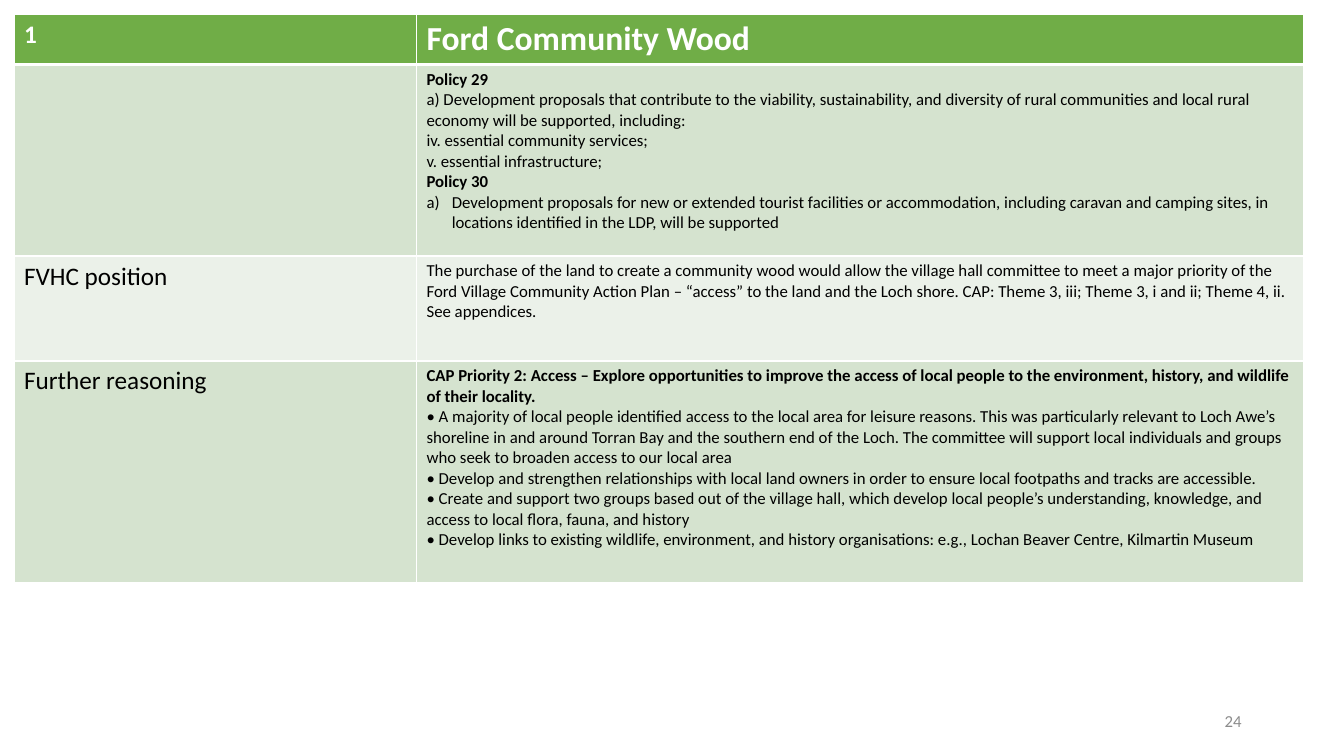
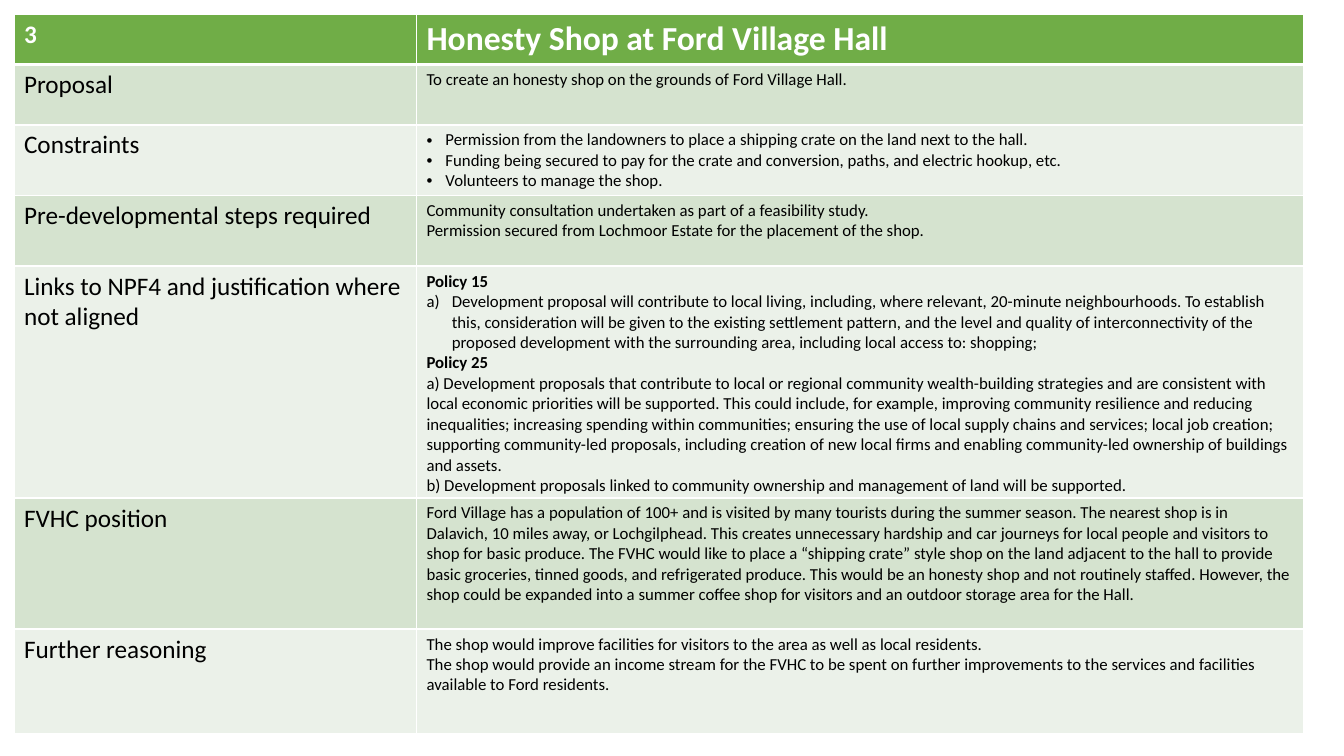
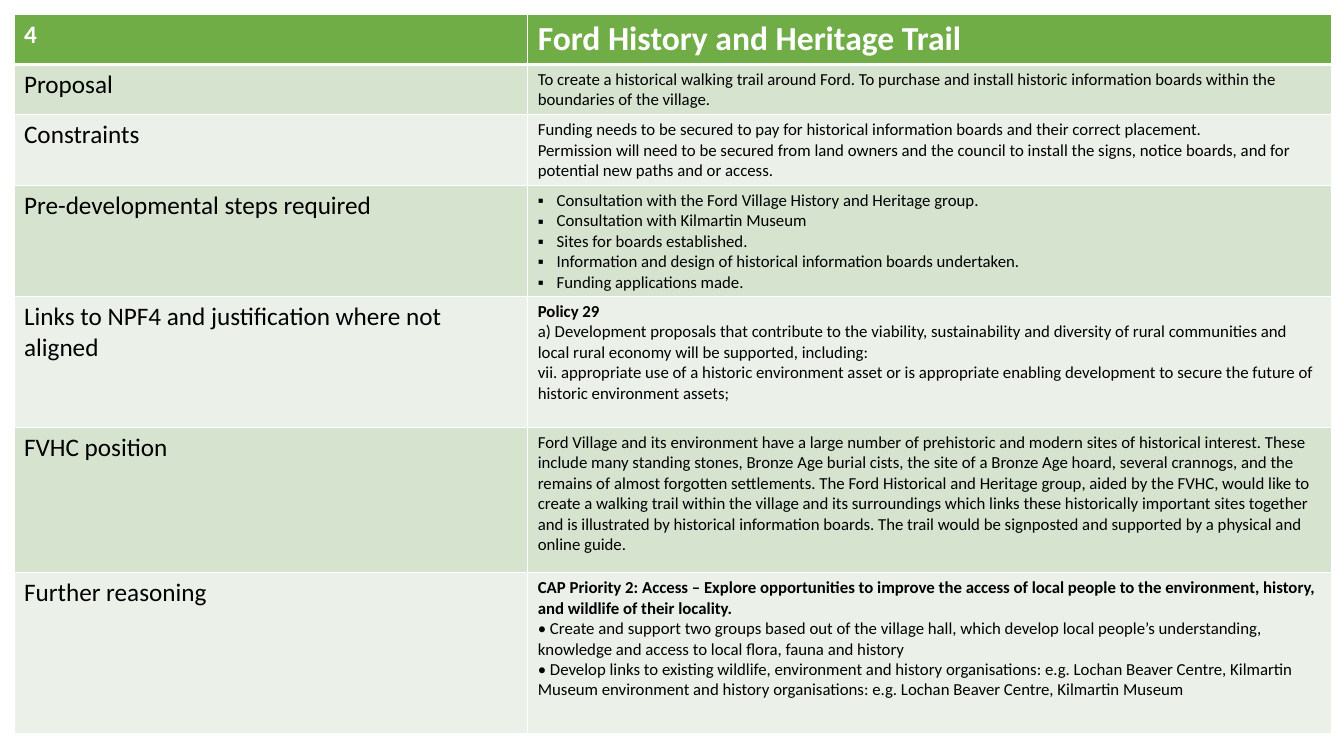
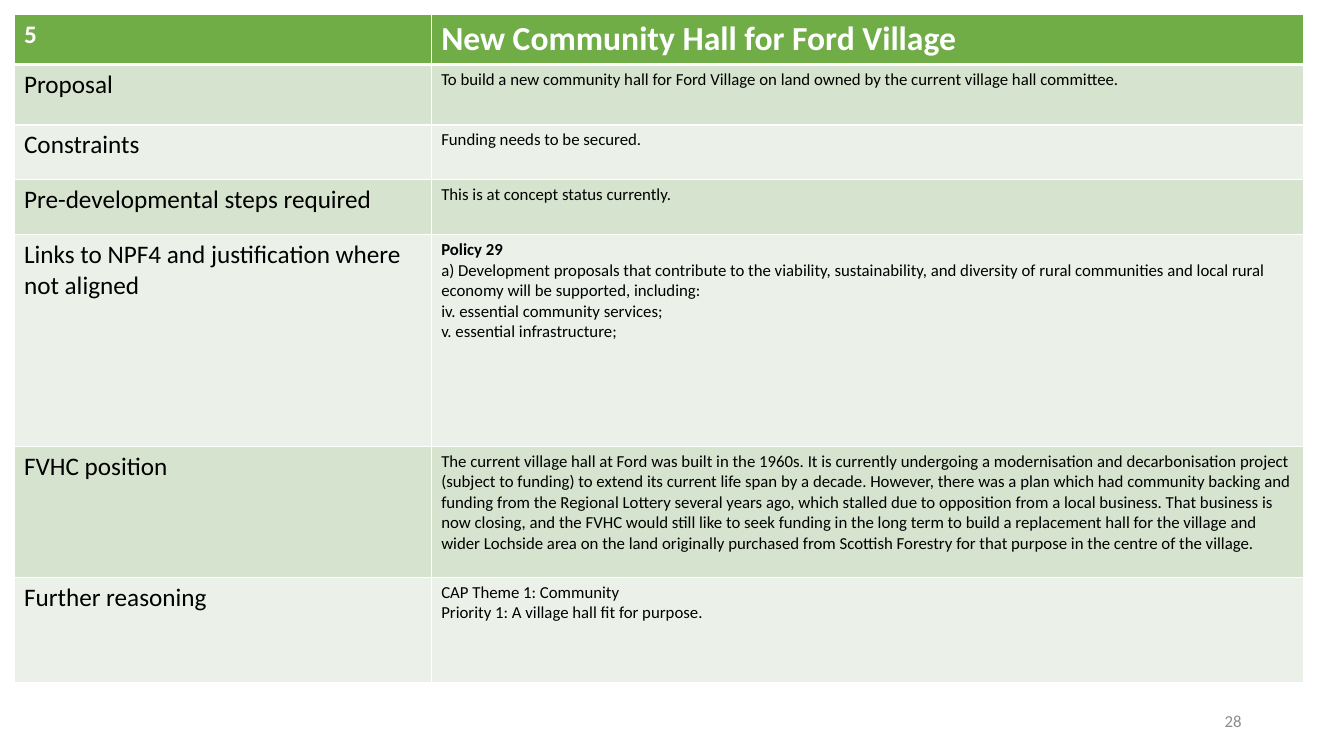
import dataclasses

import lxml.etree
import pptx
import pptx.dml.color
import pptx.enum.text
import pptx.oxml.ns
import pptx.util

Pt = pptx.util.Pt
RGB = pptx.dml.color.RGBColor
qn = pptx.oxml.ns.qn


@dataclasses.dataclass(frozen=True)
class Theme:
    font: str = "Calibri"
    heading_size: int = 24
    label_size: int = 18
    body_size: int = 12
    white: RGB = RGB(0xFF, 0xFF, 0xFF)
    black: RGB = RGB(0, 0, 0)
    page_grey: RGB = RGB(0x8C, 0x8C, 0x8C)
    header_green: RGB = RGB(0x70, 0xAD, 0x47)
    bands: tuple = (RGB(0xD5, 0xE3, 0xCF), RGB(0xEB, 0xF1, 0xE9))
    margin: int = 10
    rule: int = 1
    header_rule: int = 3
    header_height: int = 36


@dataclasses.dataclass(frozen=True)
class Para:
    text: str
    bold: bool = False
    marker: str = ""


def strong(text):
    return Para(text, bold=True)


def lettered(text):
    return Para(text, marker="a)")


def bulleted(marker, *texts):
    return [Para(text, marker=marker) for text in texts]


def plain(*texts):
    return [Para(text) for text in texts]


class Deck:
    def __init__(self, theme):
        self.theme = theme
        self.deck = pptx.Presentation()
        self.deck.slide_width = Pt(960)
        self.deck.slide_height = Pt(540)
        self.slide = None

    def new_slide(self):
        self.slide = self.deck.slides.add_slide(self.deck.slide_layouts[6])

    def add_run(self, paragraph, text, size, color, bold=False):
        run = paragraph.add_run()
        run.text = text
        run.font.name = self.theme.font
        run.font.size = Pt(size)
        run.font.bold = bold
        run.font.color.rgb = color

    def add_marker(self, paragraph, marker):
        indent = 18 if marker == "a)" else 13.5
        properties = paragraph._p.get_or_add_pPr()
        properties.set("marL", str(Pt(indent)))
        properties.set("indent", str(-Pt(indent)))
        if marker == "a)":
            lxml.etree.SubElement(properties, qn("a:buAutoNum"), type="alphaLcParenR")
        else:
            lxml.etree.SubElement(properties, qn("a:buFont"), typeface="Arial")
            lxml.etree.SubElement(properties, qn("a:buChar"), char=marker)

    def add_borders(self, cell, bottom):
        properties = cell._tc.get_or_add_tcPr()
        widths = {"lnL": self.theme.rule, "lnR": self.theme.rule,
                  "lnT": self.theme.rule, "lnB": bottom}
        for side, width in widths.items():
            line = lxml.etree.SubElement(properties, qn("a:" + side), w=str(Pt(width)))
            fill = lxml.etree.SubElement(line, qn("a:solidFill"))
            lxml.etree.SubElement(fill, qn("a:srgbClr"), val=str(self.theme.white))

    def fill_cell(self, cell, paras, size, color, fill, bottom):
        self.add_borders(cell, bottom)
        cell.fill.solid()
        cell.fill.fore_color.rgb = fill
        for index, para in enumerate(paras):
            frame = cell.text_frame
            paragraph = frame.add_paragraph() if index else frame.paragraphs[0]
            if para.marker:
                self.add_marker(paragraph, para.marker)
            self.add_run(paragraph, para.text, size, color, para.bold)

    def proposal_table(self, number, heading, widths, rows):
        theme = self.theme
        heights = [theme.header_height] + [height for _, height, _ in rows]
        table = self.slide.shapes.add_table(
            len(heights), 2, Pt(theme.margin), Pt(theme.margin),
            Pt(sum(widths)), Pt(sum(heights))).table
        for column, width in zip(table.columns, widths):
            column.width = Pt(width)
        for row, height in zip(table.rows, heights):
            row.height = Pt(height)
        for column, (text, size) in enumerate(
                [(number, theme.label_size), (heading, theme.heading_size)]):
            self.fill_cell(table.cell(0, column), [strong(text)], size,
                           theme.white, theme.header_green, theme.header_rule)
        for index, (label, _, body) in enumerate(rows):
            band = theme.bands[index % 2]
            label_paras = plain(label) if label else []
            for column, (paras, size) in enumerate(
                    [(label_paras, theme.label_size), (body, theme.body_size)]):
                self.fill_cell(table.cell(index + 1, column), paras, size,
                               theme.black, band, theme.rule)

    def page_number(self, number):
        frame = self.slide.shapes.add_textbox(Pt(678), Pt(500.5), Pt(216), Pt(28.75)).text_frame
        frame.word_wrap = True
        frame.vertical_anchor = pptx.enum.text.MSO_ANCHOR.MIDDLE
        paragraph = frame.paragraphs[0]
        paragraph.alignment = pptx.enum.text.PP_ALIGN.RIGHT
        self.add_run(paragraph, number, self.theme.body_size, self.theme.page_grey)


POSITION = "FVHC position"
REASONING = "Further reasoning"
LABELS = ["Proposal", "Constraints", "Pre-developmental steps required",
          "Links to NPF4 and justification where not aligned", POSITION, REASONING]

ACCESS_PRIORITY = strong(
    "CAP Priority 2: Access – Explore opportunities to improve the access of local people "
    "to the environment, history, and wildlife of their locality.")
RURAL_POLICY = [strong("Policy 29")] + plain(
    "a) Development proposals that contribute to the viability, sustainability, and diversity "
    "of rural communities and local rural economy will be supported, including:",
    "iv. essential community services;",
    "v. essential infrastructure;")

WOOD_ROWS = [
    ("", 136.8, RURAL_POLICY + [
        strong("Policy 30"),
        lettered("Development proposals for new or extended tourist facilities or accommodation, "
                 "including caravan and camping sites, in locations identified in the LDP, "
                 "will be supported")]),
    (POSITION, 75, plain(
        "The purchase of the land to create a community wood would allow the village hall "
        "committee to meet a major priority of the Ford Village Community Action Plan – “access” "
        "to the land and the Loch shore. CAP: Theme 3, iii; Theme 3, i and ii; Theme 4, ii. "
        "See appendices.")),
    (REASONING, 158.4, [ACCESS_PRIORITY] + plain(
        "• A majority of local people identified access to the local area for leisure reasons. "
        "This was particularly relevant to Loch Awe’s shoreline in and around Torran Bay and the "
        "southern end of the Loch. The committee will support local individuals and groups who "
        "seek to broaden access to our local area",
        "• Develop and strengthen relationships with local land owners in order to ensure local "
        "footpaths and tracks are accessible.",
        "• Create and support two groups based out of the village hall, which develop local "
        "people’s understanding, knowledge, and access to local flora, fauna, and history",
        "• Develop links to existing wildlife, environment, and history organisations: e.g., "
        "Lochan Beaver Centre, Kilmartin Museum")),
]

SHOP_HEIGHTS = [43.2, 50.4, 50.4, 165.6, 93.6, 75]
SHOP_BODIES = [
    plain("To create an honesty shop on the grounds of Ford Village Hall."),
    bulleted(
        "•",
        "Permission from the landowners to place a shipping crate on the land next to the hall.",
        "Funding being secured to pay for the crate and conversion, paths, and electric hookup, etc.",
        "Volunteers to manage the shop."),
    plain("Community consultation undertaken as part of a feasibility study.",
          "Permission secured from Lochmoor Estate for the placement of the shop."),
    [strong("Policy 15"),
     lettered("Development proposal will contribute to local living, including, where relevant, "
              "20-minute neighbourhoods. To establish this, consideration will be given to the "
              "existing settlement pattern, and the level and quality of interconnectivity of the "
              "proposed development with the surrounding area, including local access to: shopping;"),
     strong("Policy 25")] + plain(
        "a) Development proposals that contribute to local or regional community wealth-building "
        "strategies and are consistent with local economic priorities will be supported. This could "
        "include, for example, improving community resilience and reducing inequalities; increasing "
        "spending within communities; ensuring the use of local supply chains and services; local "
        "job creation; supporting community-led proposals, including creation of new local firms "
        "and enabling community-led ownership of buildings and assets.",
        "b) Development proposals linked to community ownership and management of land will be "
        "supported."),
    plain("Ford Village has a population of 100+ and is visited by many tourists during the summer "
          "season. The nearest shop is in Dalavich, 10 miles away, or Lochgilphead. This creates "
          "unnecessary hardship and car journeys for local people and visitors to shop for basic "
          "produce. The FVHC would like to place a “shipping crate” style shop on the land adjacent "
          "to the hall to provide basic groceries, tinned goods, and refrigerated produce. This "
          "would be an honesty shop and not routinely staffed. However, the shop could be expanded "
          "into a summer coffee shop for visitors and an outdoor storage area for the Hall."),
    plain("The shop would improve facilities for visitors to the area as well as local residents.",
          "The shop would provide an income stream for the FVHC to be spent on further improvements "
          "to the services and facilities available to Ford residents."),
]

TRAIL_HEIGHTS = [36, 50.4, 79.2, 93.6, 103.7, 115.2]
TRAIL_BODIES = [
    plain("To create a historical walking trail around Ford. To purchase and install historic "
          "information boards within the boundaries of the village."),
    plain("Funding needs to be secured to pay for historical information boards and their correct "
          "placement.",
          "Permission will need to be secured from land owners and the council to install the "
          "signs, notice boards, and for potential new paths and or access."),
    bulleted(
        "▪",
        "Consultation with the Ford Village History and Heritage group.",
        "Consultation with Kilmartin Museum",
        "Sites for boards established.",
        "Information and design of historical information boards undertaken.",
        "Funding applications made."),
    [strong("Policy 29")] + plain(
        "a) Development proposals that contribute to the viability, sustainability and diversity "
        "of rural communities and local rural economy will be supported, including:",
        "vii. appropriate use of a historic environment asset or is appropriate enabling "
        "development to secure the future of historic environment assets;"),
    plain("Ford Village and its environment have a large number of prehistoric and modern sites of "
          "historical interest. These include many standing stones, Bronze Age burial cists, the "
          "site of a Bronze Age hoard, several crannogs, and the remains of almost forgotten "
          "settlements. The Ford Historical and Heritage group, aided by the FVHC, would like to "
          "create a walking trail within the village and its surroundings which links these "
          "historically important sites together and is illustrated by historical information "
          "boards. The trail would be signposted and supported by a physical and online guide."),
    [ACCESS_PRIORITY] + plain(
        "• Create and support two groups based out of the village hall, which develop local "
        "people’s understanding, knowledge and access to local flora, fauna and history",
        "• Develop links to existing wildlife, environment and history organisations: e.g. "
        "Lochan Beaver Centre, Kilmartin Museum environment and history organisations: e.g. "
        "Lochan Beaver Centre, Kilmartin Museum"),
]

HALL_HEIGHTS = [43.2, 39, 39.4, 151.2, 93.6, 75]
HALL_BODIES = [
    plain("To build a new community hall for Ford Village on land owned by the current village "
          "hall committee."),
    plain("Funding needs to be secured."),
    plain("This is at concept status currently."),
    RURAL_POLICY,
    plain("The current village hall at Ford was built in the 1960s. It is currently undergoing a "
          "modernisation and decarbonisation project (subject to funding) to extend its current "
          "life span by a decade. However, there was a plan which had community backing and funding "
          "from the Regional Lottery several years ago, which stalled due to opposition from a "
          "local business. That business is now closing, and the FVHC would still like to seek "
          "funding in the long term to build a replacement hall for the village and wider Lochside "
          "area on the land originally purchased from Scottish Forestry for that purpose in the "
          "centre of the village."),
    plain("CAP Theme 1: Community", "Priority 1: A village hall fit for purpose."),
]

PROPOSALS = [
    ("1", "Ford Community Wood", (287.5, 634), WOOD_ROWS, "24"),
    ("3", "Honesty Shop at Ford Village Hall", (287.5, 634),
     list(zip(LABELS, SHOP_HEIGHTS, SHOP_BODIES)), ""),
    ("4", "Ford History and Heritage Trail", (367, 574.5),
     list(zip(LABELS, TRAIL_HEIGHTS, TRAIL_BODIES)), ""),
    ("5", "New Community Hall for Ford Village", (298, 623.5),
     list(zip(LABELS, HALL_HEIGHTS, HALL_BODIES)), "28"),
]


def main():
    plan = Deck(Theme())
    for number, heading, widths, rows, page in PROPOSALS:
        plan.new_slide()
        if page:
            plan.page_number(page)
        plan.proposal_table(number, heading, widths, rows)
    plan.deck.save("out.pptx")


if __name__ == "__main__":
    main()
